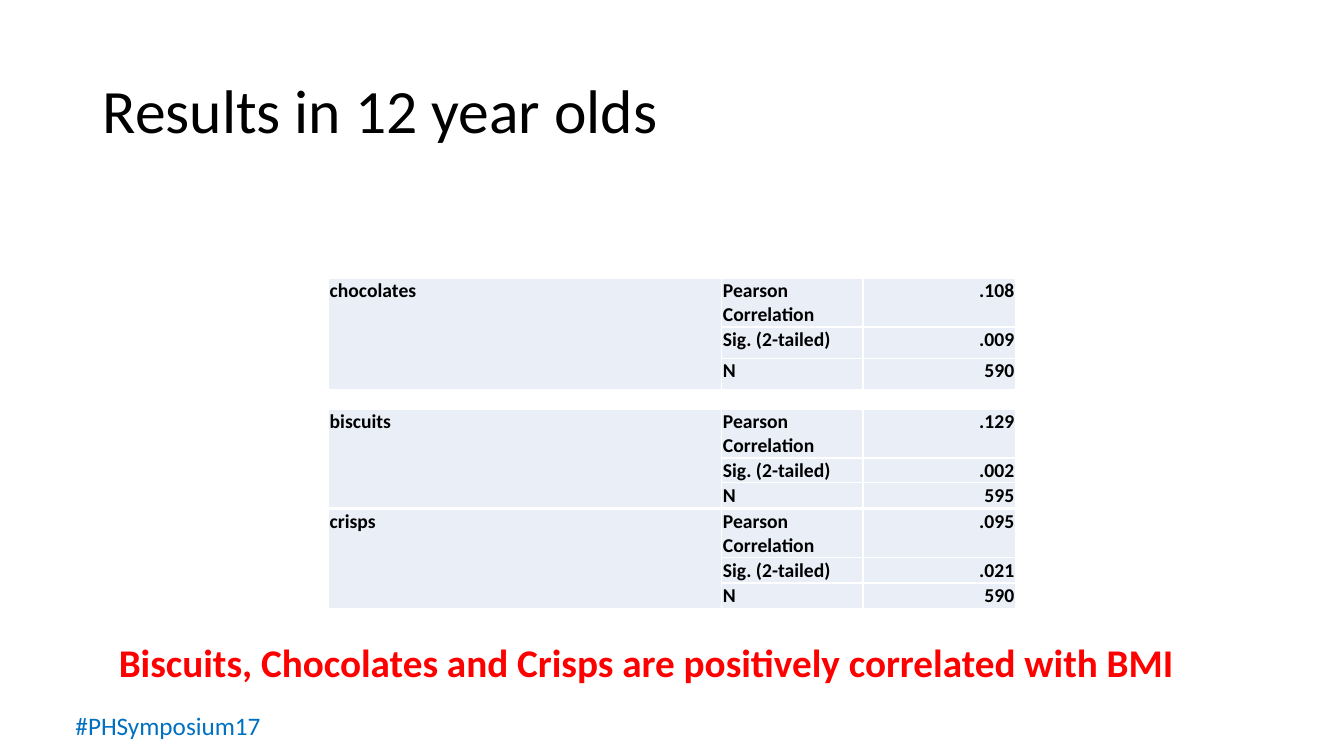
from dataclasses import dataclass

from lxml import etree
from pptx import Presentation
from pptx.dml.color import RGBColor
from pptx.enum.text import MSO_ANCHOR, PP_ALIGN
from pptx.oxml.ns import qn
from pptx.slide import Slide
from pptx.table import _Cell
from pptx.text.text import _Paragraph
from pptx.util import Inches, Pt

LEFT, RIGHT = PP_ALIGN.LEFT, PP_ALIGN.RIGHT
TOP, MIDDLE = MSO_ANCHOR.TOP, MSO_ANCHOR.MIDDLE
FONT = "Calibri"
COLOURS = {
    "black": "000000",
    "white": "FFFFFF",
    "red": "FF0000",
    "blue": "0070C0",
    "cell": "EAEFF7",
}
MEASURES = ("Pearson Correlation", "Sig. (2-tailed)", "N")
COLUMN_WIDTHS = (3.9, 1.4, 1.51)
TABLE_LEFT = 3.26
FIRST_ROW_HEIGHT = 0.48
CELL_MARGIN = 0.01


@dataclass
class Caption:
    text: str
    left: float
    top: float
    width: float
    height: float
    size: int
    colour: str
    bold: bool = False
    anchor: MSO_ANCHOR = TOP
    line_spacing: float = 1.0


@dataclass
class SnackResult:
    snack: str
    top: float
    row_height: float
    values: tuple[str, str, str]


CAPTIONS = (
    Caption("#PHSymposium17", 0.65, 7, 3.58, 0.4, 18, "blue"),
    Caption("Results in 12 year olds", 0.92, 0.4, 11.5, 1.45, 44, "black",
            anchor=MIDDLE, line_spacing=0.9),
    Caption("Biscuits, Chocolates and Crisps are positively correlated with BMI",
            1.08, 6.28, 11.66, 0.57, 28, "red", bold=True),
)
RESULTS = (
    SnackResult("chocolates", 2.76, 0.31, (".108", ".009", "590")),
    SnackResult("biscuits", 4.06, 0.24, (".129", ".002", "595")),
    SnackResult("crisps", 5.05, 0.25, (".095", ".021", "590")),
)


def add_span(para: _Paragraph, text: str, size: int, colour: str, bold: bool) -> None:
    span = para.add_run()
    span.text = text
    span.font.name = FONT
    span.font.size = Pt(size)
    span.font.bold = bold
    span.font.color.rgb = RGBColor.from_string(COLOURS[colour])


def add_caption(page: Slide, caption: Caption) -> None:
    box = page.shapes.add_textbox(Inches(caption.left), Inches(caption.top),
                                  Inches(caption.width), Inches(caption.height))
    frame = box.text_frame
    frame.word_wrap = True
    frame.vertical_anchor = caption.anchor
    para = frame.paragraphs[0]
    para.line_spacing = caption.line_spacing
    add_span(para, caption.text, caption.size, caption.colour, caption.bold)


def style_cell(cell: _Cell) -> None:
    """Give a cell its margins, white borders and fill."""
    cell.margin_left = cell.margin_right = cell.margin_top = Inches(CELL_MARGIN)
    cell.margin_bottom = 0
    properties = cell._tc.get_or_add_tcPr()
    for side in ("a:lnL", "a:lnR", "a:lnT", "a:lnB"):
        line = etree.SubElement(properties, qn(side), w=str(Pt(1)))
        fill = etree.SubElement(line, qn("a:solidFill"))
        etree.SubElement(fill, qn("a:srgbClr"), val=COLOURS["white"])
    cell.fill.solid()
    cell.fill.fore_color.rgb = RGBColor.from_string(COLOURS["cell"])


def write_cell(cell: _Cell, text: str, alignment: PP_ALIGN = LEFT) -> None:
    para = cell.text_frame.paragraphs[0]
    para.alignment = alignment
    add_span(para, text, 14, "black", True)


def add_result_table(page: Slide, result: SnackResult) -> None:
    heights = (FIRST_ROW_HEIGHT, result.row_height, result.row_height)
    table = page.shapes.add_table(
        len(MEASURES), len(COLUMN_WIDTHS), Inches(TABLE_LEFT), Inches(result.top),
        Inches(sum(COLUMN_WIDTHS)), Inches(sum(heights))).table
    table.first_row = table.horz_banding = False
    for column, width in zip(table.columns, COLUMN_WIDTHS):
        column.width = Inches(width)
    for row, height in zip(table.rows, heights):
        row.height = Inches(height)
    for cell in table.iter_cells():
        style_cell(cell)
    table.cell(0, 0).merge(table.cell(len(MEASURES) - 1, 0))
    write_cell(table.cell(0, 0), result.snack)
    for index, (measure, value) in enumerate(zip(MEASURES, result.values)):
        write_cell(table.cell(index, 1), measure)
        write_cell(table.cell(index, 2), value, RIGHT)


def main() -> None:
    deck = Presentation()
    deck.slide_width, deck.slide_height = Inches(13.33), Inches(7.5)
    page = deck.slides.add_slide(deck.slide_layouts[6])
    for result in RESULTS:
        add_result_table(page, result)
    for caption in CAPTIONS:
        add_caption(page, caption)
    deck.save("out.pptx")


if __name__ == "__main__":
    main()
